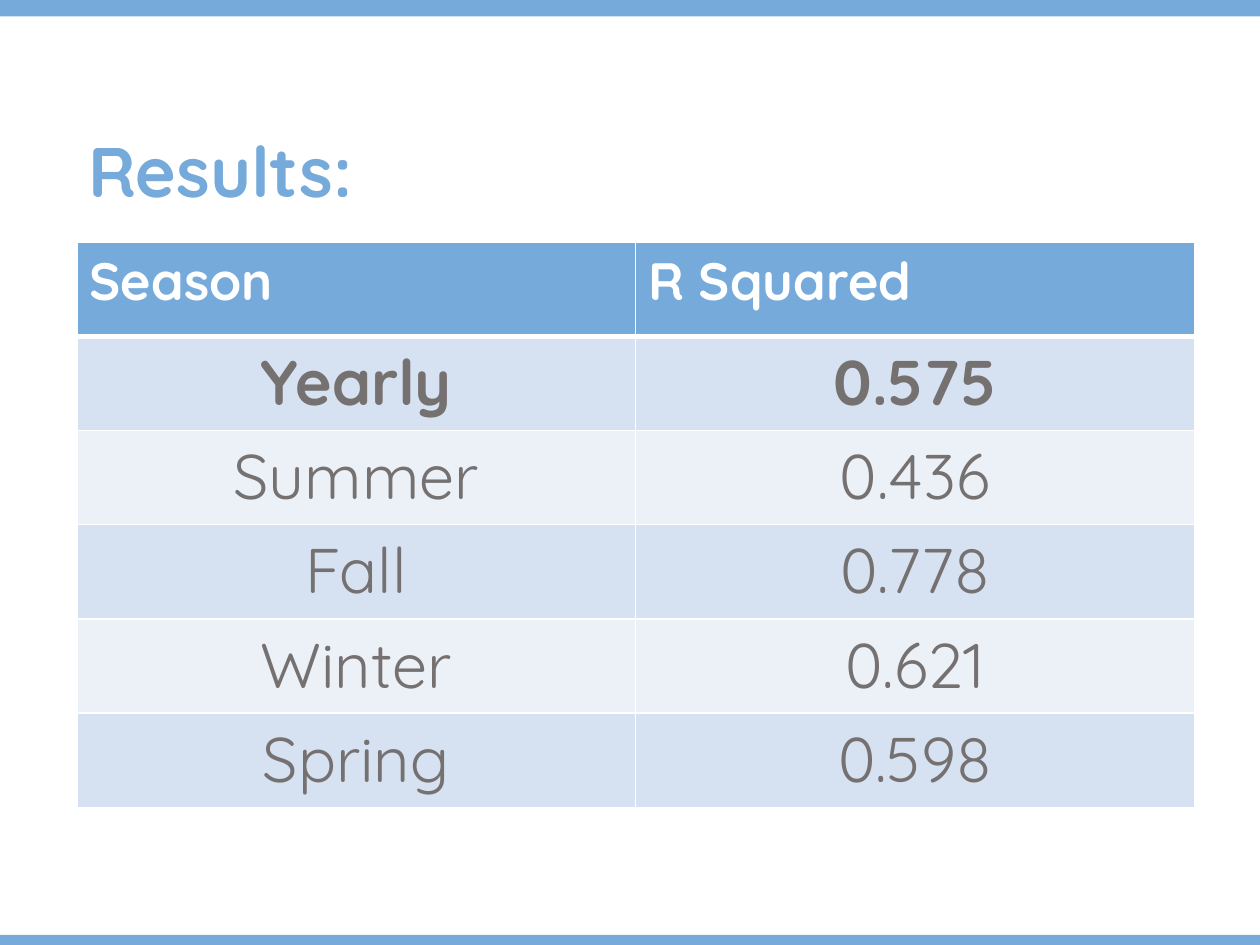
from lxml import etree
from pptx import Presentation
from pptx import util as u
from pptx.dml.color import RGBColor
from pptx.enum import shapes, text
from pptx.oxml.ns import qn

FONT = "Quicksand"
COLORS = {
    "blue": "75AADB",
    "white": "FFFFFF",
    "gray": "767171",
    "dark_band": "D6E2F1",
    "light_band": "ECF1F8",
}
RESULTS = [
    ("Season", "R Squared"),
    ("Yearly", "0.575"),
    ("Summer", "0.436"),
    ("Fall", "0.778"),
    ("Winter", "0.621"),
    ("Spring", "0.598"),
]


def style_font(paragraph, size, color, bold):
    font = paragraph.font
    font.name, font.size, font.bold = FONT, u.Pt(size), bold
    font.color.rgb = RGBColor.from_string(COLORS[color])


def add_border(cell, side, points):
    """Draw a white line on one side (L, R, T or B); call before filling the cell."""
    properties = cell._tc.get_or_add_tcPr()
    line = etree.SubElement(properties, qn(f"a:ln{side}"), w=str(u.Pt(points)))
    fill = etree.SubElement(line, qn("a:solidFill"))
    etree.SubElement(fill, qn("a:srgbClr"), val=COLORS["white"])


presentation = Presentation()
presentation.slide_width, presentation.slide_height = u.Inches(10), u.Inches(7.5)
slide = presentation.slides.add_slide(presentation.slide_layouts[5])

# Bands along the top and bottom edges
for top, height in ((0, 0.13), (7.42, 0.08)):
    band = slide.shapes.add_shape(
        shapes.MSO_SHAPE.RECTANGLE, 0, u.Inches(top), presentation.slide_width, u.Inches(height)
    )
    band.shadow.inherit = False
    band.fill.solid()
    band.fill.fore_color.rgb = RGBColor.from_string(COLORS["blue"])
    band.line.fill.background()

# Title
title = slide.shapes.title
title.left, title.top = u.Inches(0.6), u.Inches(0.96)
title.width, title.height = u.Inches(6.11), u.Inches(0.78)
title.text_frame.text = "Results:"
title.text_frame.vertical_anchor = text.MSO_ANCHOR.BOTTOM
title.text_frame.auto_size = text.MSO_AUTO_SIZE.NONE
paragraph = title.text_frame.paragraphs[0]
paragraph.alignment = text.PP_ALIGN.LEFT
paragraph.line_spacing = 0.9
paragraph.space_before = u.Pt(10)
style_font(paragraph, 40, "blue", True)

# Results table
table = slide.shapes.add_table(
    len(RESULTS), 2, u.Inches(0.61), u.Inches(1.92), u.Inches(8.87), u.Inches(4.49)
).table
for row, values in enumerate(RESULTS):
    is_header = row == 0
    band_color = "blue" if is_header else "dark_band" if row % 2 else "light_band"
    for column, value in enumerate(values):
        cell = table.cell(row, column)
        cell.text = value
        paragraph = cell.text_frame.paragraphs[0]
        if is_header:
            style_font(paragraph, 30, "white", True)
        else:
            paragraph.alignment = text.PP_ALIGN.CENTER
            style_font(paragraph, 36, "gray", value in RESULTS[1])
        for side in "LRTB":
            under_header = (row, side) in ((0, "B"), (1, "T"))
            add_border(cell, side, 3 if under_header else 1)
        cell.fill.solid()
        cell.fill.fore_color.rgb = RGBColor.from_string(COLORS[band_color])

presentation.save("out.pptx")
